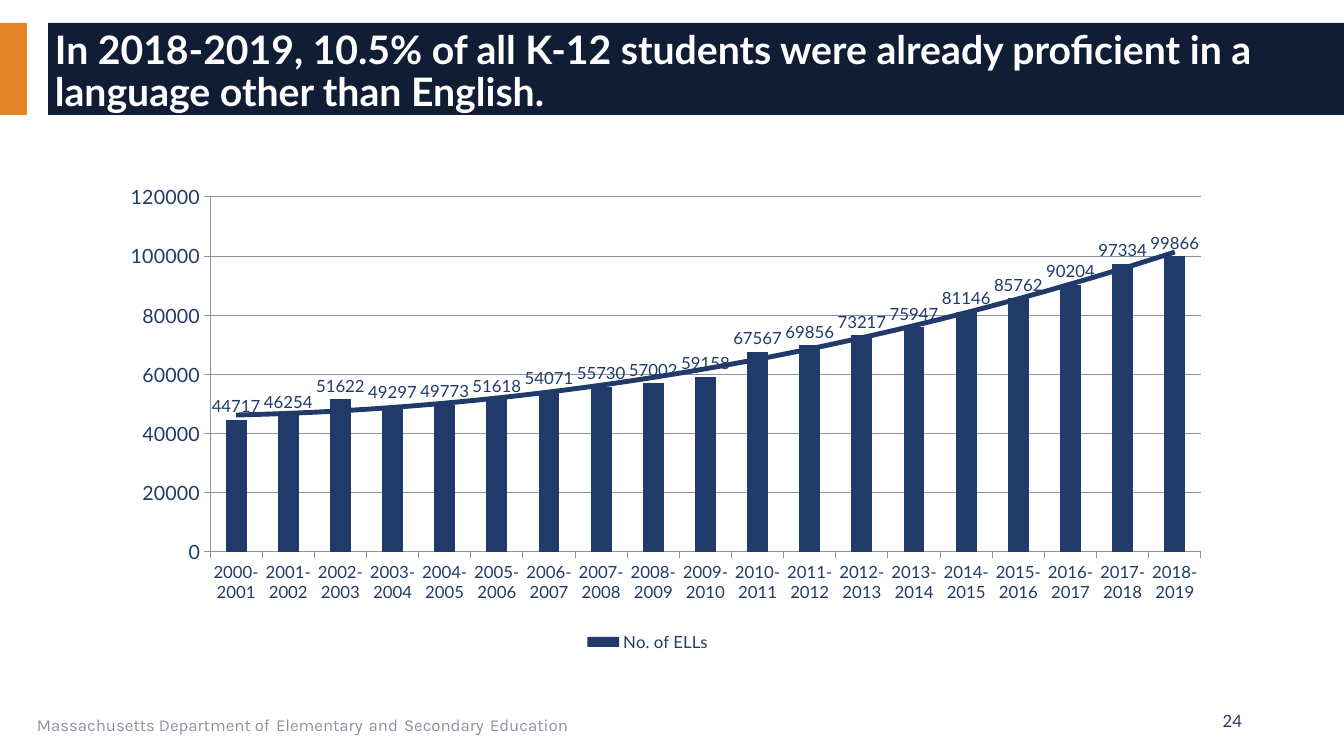
"""Build the slide on English learner enrolment by school year."""
from pptx import Presentation
from pptx.chart.data import CategoryChartData
from pptx.dml.color import RGBColor
from pptx.enum.chart import XL_CHART_TYPE, XL_LABEL_POSITION, XL_LEGEND_POSITION, XL_TICK_MARK
from pptx.enum.shapes import MSO_SHAPE
from pptx.enum.text import MSO_ANCHOR, PP_ALIGN
from pptx.oxml import parse_xml
from pptx.oxml.ns import nsdecls, qn
from pptx.util import Emu, Pt

TITLE = ("In 2018-2019, 10.5% of all K-12 students were already proficient "
         "in a language other than English.")
FOOTER = ["Massachusetts Department of", "Elementary", "and", "Secondary", "Education"]
PAGE = "24"
SERIES = "No. of ELLs"
FIRST_YEAR = 2000
LEARNERS = [44717, 46254, 51622, 49297, 49773, 51618, 54071, 55730, 57002, 59158,
            67567, 69856, 73217, 75947, 81146, 85762, 90204, 97334, 99866]

SLIDE = (1344, 756)
BANDS = [((0, 23, 27, 92), "orange"), ((48, 23, 1296, 92), "navy")]
TITLE_BOX = (45, 0, 1254, 145)
FOOTER_BOX = (27, 701, 851, 40)
PAGE_BOX = (950, 701, 302, 40)
CHART_BOX = (93, 179, 1159, 498)
PLOT_BOX = (210, 197, 991, 355)
LEGEND_BOX = (582, 649, 140, 28)


class Theme:
    """Colours, fonts and type sizes."""
    orange, navy, blue, grey, white = "E38526", "101D35", "203B6A", "8D92A1", "FFFFFF"
    body, footer = "Lato", "Karla"
    title, gap, axis, small = 28, 18, 14, 12
    trend, hairline = 3.5, 0.75


def px(n):
    return Emu(round(n * 914400 / 100.8))


def place(box):
    return [px(n) for n in box]


def rgb(name):
    return RGBColor.from_string(getattr(Theme, name))


def add_band(s, box, color):
    sp = s.shapes.add_shape(MSO_SHAPE.RECTANGLE, *place(box))
    sp.shadow.inherit = False
    sp.fill.solid()
    sp.fill.fore_color.rgb = rgb(color)
    sp.line.fill.background()


def add_text(s, box, runs, font, bold=False, anchor=MSO_ANCHOR.MIDDLE,
             align=PP_ALIGN.LEFT, spacing=1.0):
    tf = s.shapes.add_textbox(*place(box)).text_frame
    tf.word_wrap = True
    tf.vertical_anchor = anchor
    p = tf.paragraphs[0]
    p.alignment, p.line_spacing = align, spacing
    for text, size, color in runs:
        r = p.add_run()
        r.text = text
        r.font.name, r.font.size, r.font.bold = font, Pt(size), bold
        r.font.color.rgb = rgb(color)


def set_layout(element, index, box, target=""):
    left, top, width, height = CHART_BOX
    x, y, w, h = box
    shares = {"x": (x - left) / width, "y": (y - top) / height,
              "w": w / width, "h": h / height}
    values = "".join(f'<c:{k} val="{v:.3f}"/>' for k, v in shares.items())
    for old in element.findall(qn("c:layout")):
        element.remove(old)
    element.insert(index, parse_xml(
        f'<c:layout {nsdecls("c")}><c:manualLayout>{target}'
        f'<c:xMode val="edge"/><c:yMode val="edge"/>{values}'
        '</c:manualLayout></c:layout>'))


def add_trend(series):
    trend = parse_xml(
        f'<c:trendline {nsdecls("c", "a")}><c:spPr><a:ln w="{Pt(Theme.trend)}">'
        f'<a:solidFill><a:srgbClr val="{Theme.blue}"/></a:solidFill></a:ln></c:spPr>'
        '<c:trendlineType val="poly"/><c:order val="2"/>'
        '<c:dispRSqr val="0"/><c:dispEq val="0"/></c:trendline>')
    series._element.find(qn("c:cat")).addprevious(trend)


def style_line(line):
    line.color.rgb = rgb("grey")
    line.width = Pt(Theme.hairline)


def add_learner_chart(s):
    data = CategoryChartData()
    data.categories = [f"{y}-{y + 1}" for y in range(FIRST_YEAR, FIRST_YEAR + len(LEARNERS))]
    data.add_series(SERIES, LEARNERS)
    chart = s.shapes.add_chart(XL_CHART_TYPE.COLUMN_CLUSTERED, *place(CHART_BOX), data).chart
    chart.has_title = False
    chart.font.name, chart.font.size = Theme.body, Pt(Theme.gap)
    chart.font.color.rgb = rgb("blue")

    plot = chart.plots[0]
    plot.vary_by_categories = False
    plot.gap_width = 150
    series = plot.series[0]
    series.format.fill.solid()
    series.format.fill.fore_color.rgb = rgb("blue")
    labels = series.data_labels
    labels.show_value = True
    labels.position = XL_LABEL_POSITION.OUTSIDE_END
    labels.font.size = Pt(Theme.small)
    labels.font.color.rgb = rgb("blue")
    add_trend(series)

    for axis, size in ((chart.category_axis, Theme.small), (chart.value_axis, Theme.axis)):
        axis.major_tick_mark = XL_TICK_MARK.OUTSIDE
        axis.tick_labels.font.size = Pt(size)
        axis.tick_labels.font.color.rgb = rgb("blue")
        style_line(axis.format.line)
    chart.value_axis.minimum_scale = 0
    chart.value_axis.maximum_scale = 120000
    chart.value_axis.major_unit = 20000
    style_line(chart.value_axis.major_gridlines.format.line)

    chart.has_legend = True
    legend = chart.legend
    legend.position = XL_LEGEND_POSITION.RIGHT
    legend.include_in_layout = False
    legend.font.size = Pt(Theme.small)
    legend.font.color.rgb = rgb("blue")
    set_layout(legend._element, 1, LEGEND_BOX)
    legend._element.insert(1, parse_xml(
        f'<c:legendEntry {nsdecls("c")}><c:idx val="1"/><c:delete val="1"/></c:legendEntry>'))
    plot_area = chart._chartSpace.chart.plotArea
    set_layout(plot_area, 0, PLOT_BOX, '<c:layoutTarget val="inner"/>')


def main():
    prs = Presentation()
    prs.slide_width, prs.slide_height = place(SLIDE)
    s = prs.slides.add_slide(prs.slide_layouts[6])
    for box, color in BANDS:
        add_band(s, box, color)
    footer = []
    for words in FOOTER:
        if footer:
            footer.append((" ", Theme.gap, "blue"))
        footer.append((words, Theme.small, "grey"))
    add_text(s, FOOTER_BOX, footer, Theme.footer, anchor=MSO_ANCHOR.TOP)
    add_text(s, TITLE_BOX, [(TITLE, Theme.title, "white")], Theme.body, bold=True, spacing=0.9)
    add_text(s, PAGE_BOX, [(PAGE, Theme.small, "blue")], Theme.body, align=PP_ALIGN.RIGHT)
    add_learner_chart(s)
    prs.save("out.pptx")


if __name__ == "__main__":
    main()
